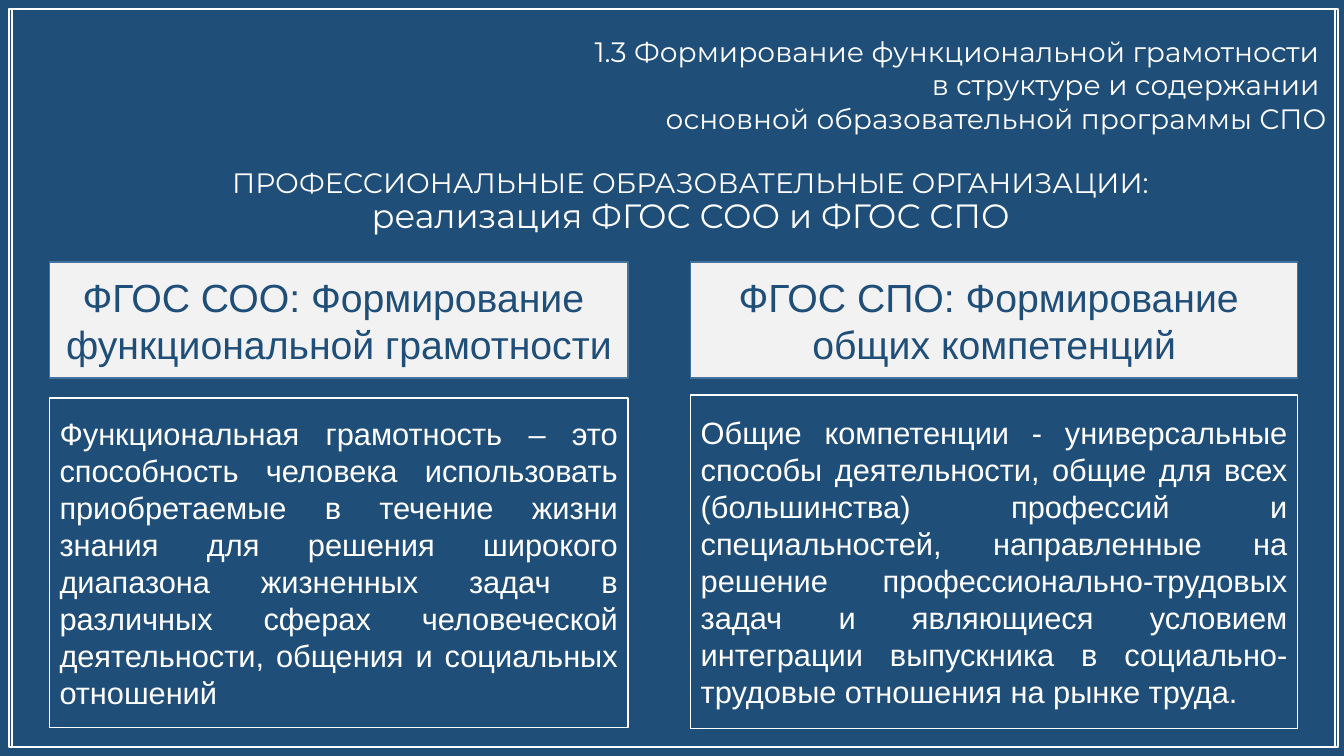
from dataclasses import dataclass

from lxml import etree
from pptx import Presentation
from pptx import util as u
from pptx.dml.color import RGBColor
from pptx.enum import shapes, text
from pptx.oxml.ns import qn


@dataclass(frozen=True)
class Theme:
    """Colours, fonts and type sizes of the slide."""
    navy: str = "1F4E79"
    white: str = "FFFFFF"
    pale: str = "F2F2F2"
    edge: str = "43739E"
    display: str = "Montserrat"
    plain: str = "Arial"
    small: int = 20
    body: int = 22
    accent: int = 24
    heading: int = 28


class SlideBuilder:
    """Puts styled elements on the current slide."""

    def __init__(self, deck, theme):
        """Add a comparison slide with a plain background."""
        self.theme = theme
        self.slide = deck.slides.add_slide(deck.slide_layouts[4])
        backdrop = self.slide.background.fill
        backdrop.solid()
        backdrop.fore_color.rgb = RGBColor.from_string(theme.navy)

    def apply(self, target, values):
        """Set every attribute named in values."""
        for name, value in values.items():
            setattr(target, name, value)

    def place(self, element, box):
        """Move and size an element."""
        sides = ("left", "top", "width", "height")
        self.apply(element, dict(zip(sides, map(u.Inches, box))))

    def outline(self, element, colour):
        """Draw a thin border."""
        element.line.color.rgb = RGBColor.from_string(colour)
        element.line.width = u.Pt(1)

    def typeset(self, element, paragraphs, align, font, colour, spacing=1.0,
                anchor=text.MSO_ANCHOR.TOP):
        """Fill paragraphs, each a list of (wording, size) lines."""
        frame = element.text_frame
        self.apply(frame, {"word_wrap": True, "vertical_anchor": anchor,
                           "auto_size": text.MSO_AUTO_SIZE.NONE})
        for number, lines in enumerate(paragraphs):
            paragraph = frame.add_paragraph() if number else frame.paragraphs[0]
            self.apply(paragraph, {"alignment": align, "line_spacing": spacing,
                                   "space_before": u.Pt(0), "space_after": u.Pt(0)})
            properties = paragraph._p.get_or_add_pPr()
            properties.set("marL", "0")
            properties.set("indent", "0")
            etree.SubElement(properties, qn("a:buNone"))
            for position, (wording, size) in enumerate(lines):
                if position:
                    paragraph.add_line_break()
                run = paragraph.add_run()
                run.text = wording
                self.apply(run.font, {"name": font, "size": u.Pt(size), "bold": False})
                run.font.color.rgb = RGBColor.from_string(colour)

    def border(self, box):
        """Add an unfilled rectangle around the slide."""
        rectangle = self.slide.shapes.add_shape(
            shapes.MSO_SHAPE.RECTANGLE, *map(u.Inches, box))
        rectangle.shadow.inherit = False
        rectangle.fill.background()
        self.outline(rectangle, self.theme.white)

    def title(self, box, lines):
        """Set the right-aligned slide title."""
        heading = self.slide.shapes.title
        self.place(heading, box)
        self.typeset(heading, [[(line, self.theme.small)] for line in lines],
                     text.PP_ALIGN.RIGHT, self.theme.display, self.theme.white)

    def subtitle(self, box, lines):
        """Add the centred line pair below the title."""
        caption = self.slide.shapes.add_textbox(*map(u.Inches, box))
        self.typeset(caption, [lines], text.PP_ALIGN.CENTER,
                     self.theme.display, self.theme.white, 0.9)

    def panel(self, index, box, lines, size, align, ink, edge, fill=None):
        """Turn a body placeholder into a bordered panel."""
        body = self.slide.placeholders[index]
        self.place(body, box)
        if fill:
            body.fill.solid()
            body.fill.fore_color.rgb = RGBColor.from_string(fill)
        self.outline(body, edge)
        self.typeset(body, [[(line, size)] for line in lines], align,
                     self.theme.plain, ink, anchor=text.MSO_ANCHOR.MIDDLE)

    def column(self, index, left, width, top, height, heading, definition):
        """Add a heading panel and the definition below it."""
        theme = self.theme
        self.panel(index, (left, 2.6, width, 1.15), heading, theme.heading,
                   text.PP_ALIGN.CENTER, theme.navy, theme.edge, theme.pale)
        self.panel(index + 1, (left, top, width, height), [definition], theme.body,
                   text.PP_ALIGN.JUSTIFY, theme.white, theme.white)


def main():
    """Build and save the slide."""
    deck = Presentation()
    deck.slide_width, deck.slide_height = u.Inches(13.33), u.Inches(7.5)
    theme = Theme()
    builder = SlideBuilder(deck, theme)
    for left in (0.09, 0.12):
        builder.border((left, 0.09, 13.15, 7.32))
    builder.title((0.28, 0.29, 12.98, 1.11), [
        "1.3 Формирование функциональной грамотности ",
        "в структуре и содержании ",
        "основной образовательной программы СПО"])
    builder.subtitle((1.1, 1.63, 11.5, 0.8), [
        ("ПРОФЕССИОНАЛЬНЫЕ ОБРАЗОВАТЕЛЬНЫЕ ОРГАНИЗАЦИИ:", theme.small),
        ("реализация ФГОС СОО и ФГОС СПО", theme.accent)])
    builder.column(
        1, 0.49, 5.74, 3.95, 3.27,
        ["ФГОС СОО: Формирование ", "функциональной грамотности"],
        "Функциональная грамотность – это способность человека использовать "
        "приобретаемые в течение жизни знания для решения широкого диапазона "
        "жизненных задач в различных сферах человеческой деятельности, общения "
        "и социальных отношений")
    builder.column(
        3, 6.85, 6.02, 3.92, 3.31,
        ["ФГОС СПО: Формирование ", "общих компетенций"],
        "Общие компетенции - универсальные способы деятельности, общие для всех "
        "(большинства) профессий и специальностей, направленные на решение "
        "профессионально-трудовых задач и являющиеся условием интеграции "
        "выпускника в социально-трудовые отношения на рынке труда.")
    deck.save("out.pptx")


if __name__ == "__main__":
    main()
